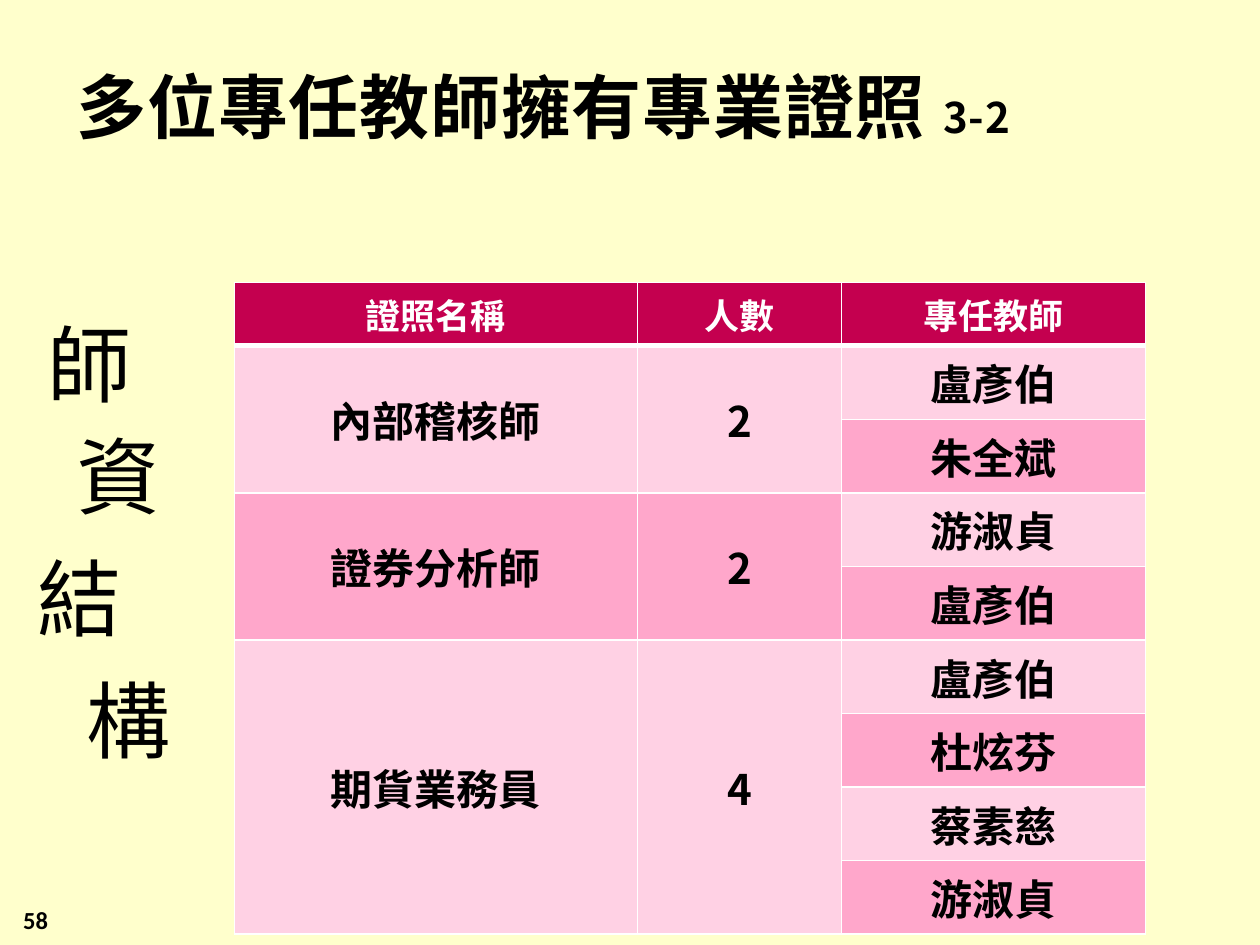
from dataclasses import dataclass

from lxml.etree import SubElement
from pptx import Presentation
from pptx.dml.color import RGBColor as Color
from pptx.enum.text import MSO_ANCHOR as Anchor, PP_ALIGN as Align
from pptx.oxml import parse_xml
from pptx.oxml.ns import nsdecls, qn
from pptx.util import Inches, Pt


@dataclass(frozen=True)
class Theme:
    """Colours, fonts and type sizes of the deck."""
    paper: str = "FFFFCC"
    ink: str = "000000"
    white: str = "FFFFFF"
    header: str = "C4004F"
    bands: tuple = ("FFD1E4", "FFA7CB")
    bold_font: str = "Noto Sans CJK SC"
    label_font: str = "Noto Sans CJK JP"
    number_font: str = "Calibri"
    title_size: int = 40
    label_size: int = 48
    body_size: int = 24
    header_size: int = 20
    number_size: int = 14


THEME = Theme()
HEADINGS = ("證照名稱", "人數", "專任教師")
CERTIFICATES = (
    ("內部稽核師", ("盧彥伯", "朱全斌")),
    ("證券分析師", ("游淑貞", "盧彥伯")),
    ("期貨業務員", ("盧彥伯", "杜炫芬", "蔡素慈", "游淑貞")),
)
COLUMN_WIDTHS = (3.2, 1.62, 2.41)
SECTION_LABEL = (("師", 0.08, 0), ("資", 0.31, 0.89), ("結", 0, 1.86), ("構", 0.39, 2.83))


def add_span(para, text, *, size, font=THEME.bold_font, color=THEME.ink, bold=True, spacing=None):
    """Append formatted text to a paragraph."""
    span = para.add_run()
    span.text = text
    span.font.size = Pt(size)
    span.font.bold = bold
    span.font.name = font
    span.font.color.rgb = Color.from_string(color)
    properties = span.font._element
    SubElement(properties, qn("a:ea")).set("typeface", font)
    if spacing is not None:
        properties.set("spc", str(round(spacing * 100)))


def add_box(page, left, top, width, height, anchor=Anchor.TOP, align=Align.LEFT):
    """Add a wrapping text box and return its first paragraph."""
    box = page.shapes.add_textbox(Inches(left), Inches(top), Inches(width), Inches(height))
    frame = box.text_frame
    frame.word_wrap = True
    frame.vertical_anchor = anchor
    para = frame.paragraphs[0]
    para.alignment = align
    return para


def style_cell(cell, fill, bottom=1):
    """Fill a cell and draw its white borders."""
    cell.fill.solid()
    cell.fill.fore_color.rgb = Color.from_string(fill)
    cell.vertical_anchor = Anchor.MIDDLE
    properties = cell._tc.get_or_add_tcPr()
    for index, (side, width) in enumerate({"L": 1, "R": 1, "T": 1, "B": bottom}.items()):
        properties.insert(index, parse_xml(
            f'<a:ln{side} {nsdecls("a")} w="{Pt(width)}"><a:solidFill>'
            f'<a:srgbClr val="{THEME.white}"/></a:solidFill></a:ln{side}>'))


def write_cell(cell, text, **text_format):
    """Write centred text in a cell."""
    para = cell.text_frame.paragraphs[0]
    para.alignment = Align.CENTER
    add_span(para, text, **text_format)


def add_title(page, left, top, width, height):
    """Place the title with its part number."""
    para = add_box(page, left, top, width, height, anchor=Anchor.MIDDLE)
    add_span(para, "多位專任教師擁有專業證照 ", size=THEME.title_size, spacing=0.5)
    add_span(para, "3-2", size=THEME.body_size, spacing=0.5)


def add_section_label(page, left, top, width, height):
    """Place the staggered section name down the side."""
    for character, across, down in SECTION_LABEL:
        para = add_box(page, left + across, top + down, width, height)
        add_span(para, character, size=THEME.label_size, font=THEME.label_font, bold=False)


def add_certificates(page, left, top, width, height):
    """Place the table of certificates and their holders."""
    row_count = 1 + sum(len(teachers) for _, teachers in CERTIFICATES)
    table = page.shapes.add_table(row_count, len(HEADINGS), Inches(left), Inches(top),
                                  Inches(width), Inches(height)).table
    for column, column_width in zip(table.columns, COLUMN_WIDTHS):
        column.width = Inches(column_width)
    for column, heading in enumerate(HEADINGS):
        style_cell(table.cell(0, column), THEME.header, bottom=3)
        write_cell(table.cell(0, column), heading, size=THEME.header_size, color=THEME.white)
    row = 1
    for group, (certificate, teachers) in enumerate(CERTIFICATES):
        last = row + len(teachers) - 1
        for column, text in enumerate((certificate, str(len(teachers)))):
            for line in range(row, last + 1):
                style_cell(table.cell(line, column), THEME.bands[group % 2])
            table.cell(row, column).merge(table.cell(last, column))
            write_cell(table.cell(row, column), text, size=THEME.body_size)
        for line, teacher in enumerate(teachers, row):
            style_cell(table.cell(line, 2), THEME.bands[(line - 1) % 2])
            write_cell(table.cell(line, 2), teacher, size=THEME.body_size)
        row = last + 1


def add_page_number(page, left, top, width, height):
    """Place the page number against the right edge of its box."""
    para = add_box(page, left, top, width, height, anchor=Anchor.MIDDLE, align=Align.RIGHT)
    add_span(para, "58", size=THEME.number_size, font=THEME.number_font)


def main():
    """Build and save the deck."""
    deck = Presentation()
    deck.slide_width, deck.slide_height = Inches(10), Inches(7.5)
    page = deck.slides.add_slide(deck.slide_layouts[6])
    page.background.fill.solid()
    page.background.fill.fore_color.rgb = Color.from_string(THEME.paper)
    add_certificates(page, 1.86, 2.24, sum(COLUMN_WIDTHS), 4.5)
    add_page_number(page, -1.85, 7.1, 2.33, 0.4)
    add_section_label(page, 0.2, 2.43, 1.02, 0.93)
    add_title(page, 0.51, 0.21, 9, 1.25)
    deck.save("out.pptx")


if __name__ == "__main__":
    main()
